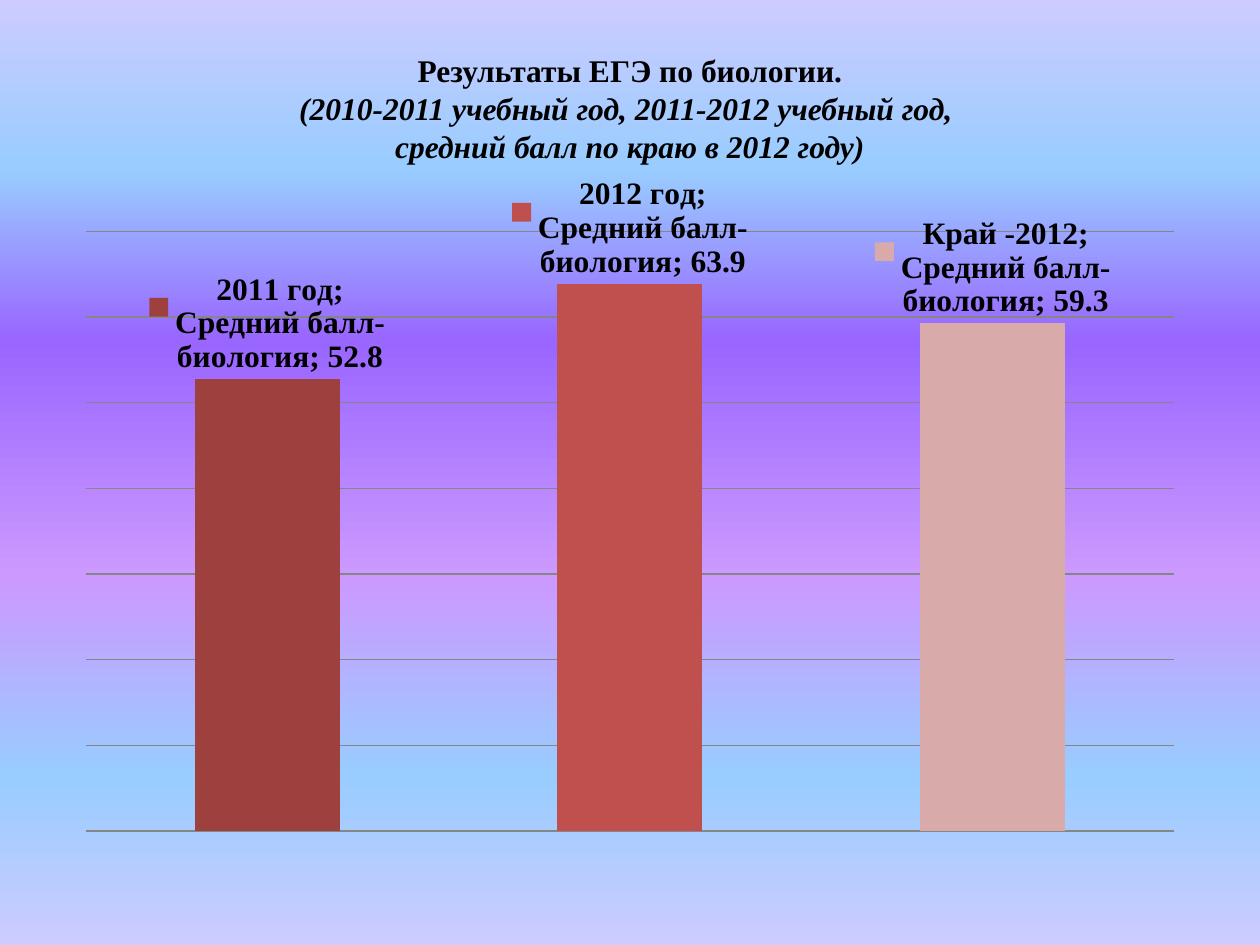
from typing import NamedTuple

from lxml.etree import SubElement
from pptx import Presentation
from pptx.chart.data import CategoryChartData
from pptx.dml.color import RGBColor
from pptx.enum.chart import XL_CHART_TYPE as ChartType, XL_LABEL_POSITION as LabelPosition
from pptx.enum.text import MSO_ANCHOR, PP_ALIGN
from pptx.oxml import parse_xml
from pptx.oxml.ns import nsdecls, qn
from pptx.util import Inches, Pt

BLACK = RGBColor(0x00, 0x00, 0x00)
GRID_GREY = RGBColor(0x86, 0x86, 0x86)
LAVENDER = RGBColor(0xCC, 0xCC, 0xFF)
SKY = RGBColor(0x99, 0xCC, 0xFF)
VIOLET = RGBColor(0x99, 0x66, 0xFF)
ORCHID = RGBColor(0xCC, 0x99, 0xFF)
DARK_RED = RGBColor(0x9E, 0x41, 0x3E)
RED = RGBColor(0xC0, 0x50, 0x4D)
PALE_RED = RGBColor(0xD8, 0xAA, 0xA9)
SERIF = "Times New Roman"


class Stop(NamedTuple):
    percent: int
    color: RGBColor


class Result(NamedTuple):
    category: str
    score: float
    color: RGBColor


class TitleParagraph(NamedTuple):
    text: str
    italic: bool


STOPS = [Stop(0, LAVENDER), Stop(18, SKY), Stop(36, VIOLET),
         Stop(61, ORCHID), Stop(82, SKY), Stop(100, LAVENDER)]
RESULTS = [Result("2011 год", 52.8, DARK_RED),
           Result("2012 год", 63.9, RED),
           Result("Край -2012", 59.3, PALE_RED)]
TITLE = [
    TitleParagraph("Результаты ЕГЭ по биологии.", False),
    TitleParagraph("(2010-2011 учебный год, 2011-2012 учебный год, \v"
                   "средний балл по краю в 2012 году)", True),
]


def paint_background(slide) -> None:
    fill = slide.background.fill
    fill.gradient()
    stops = "".join(
        f'<a:gs pos="{stop.percent * 1000}"><a:srgbClr val="{stop.color}"/></a:gs>'
        for stop in STOPS)
    gradient = slide.background._cSld.find(".//" + qn("a:gradFill"))
    gradient.getparent().replace(gradient, parse_xml(
        f'<a:gradFill {nsdecls("a")} rotWithShape="1"><a:gsLst>{stops}</a:gsLst>'
        '<a:lin ang="5400000" scaled="0"/></a:gradFill>'))


def add_title(slide) -> None:
    frame = slide.shapes.add_textbox(
        Inches(0.5), Inches(0.31), Inches(9), Inches(1.09)).text_frame
    frame.word_wrap = True
    frame.vertical_anchor = MSO_ANCHOR.MIDDLE
    for index, content in enumerate(TITLE):
        paragraph = frame.add_paragraph() if index else frame.paragraphs[0]
        paragraph.text = content.text
        paragraph.alignment = PP_ALIGN.CENTER
        paragraph.line_spacing = Pt(21.7)
        font = paragraph.font
        font.name, font.size, font.bold = SERIF, Pt(18), True
        font.italic = content.italic
        font.color.rgb = BLACK


def set_plot_layout(chart, **fractions: float) -> None:
    """Fix the inner plot area as fractions of the chart."""
    plot_area = chart._chartSpace.chart.plotArea
    old_layout = plot_area.find(qn("c:layout"))
    if old_layout is not None:
        plot_area.remove(old_layout)
    layout = parse_xml(f'<c:layout {nsdecls("c")}/>')
    manual = SubElement(layout, qn("c:manualLayout"))
    settings = {"layoutTarget": "inner", "xMode": "edge", "yMode": "edge", **fractions}
    for name, value in settings.items():
        SubElement(manual, qn(f"c:{name}")).set("val", str(value))
    plot_area.insert(0, layout)


def label_bars(series) -> None:
    labels = series.data_labels
    labels.show_value = labels.show_category_name = True
    labels.show_series_name = labels.show_legend_key = True
    labels.position = LabelPosition.OUTSIDE_END
    font = labels.font
    font.name, font.size, font.bold = SERIF, Pt(18), True
    font.color.rgb = BLACK
    separator = parse_xml(f'<c:separator {nsdecls("c")}>; </c:separator>')
    labels._element.find(qn("c:showBubbleSize")).addnext(separator)


def add_score_chart(slide) -> None:
    data = CategoryChartData(number_format="General")
    data.categories = [result.category for result in RESULTS]
    data.add_series("Средний балл-биология", [result.score for result in RESULTS])
    chart = slide.shapes.add_chart(
        ChartType.COLUMN_CLUSTERED, Inches(0.5), Inches(1.41),
        Inches(9), Inches(5.29), data).chart
    chart.has_legend = chart.has_title = False
    chart.font.name, chart.font.size = "Calibri", Pt(10)
    chart.font.color.rgb = BLACK
    set_plot_layout(chart, x=0.02, y=0.07, w=0.96, h=0.91)

    # Hidden axes with visible gridlines
    chart.category_axis.visible = False
    scores = chart.value_axis
    scores.visible = False
    scores.minimum_scale, scores.maximum_scale, scores.major_unit = 0, 70, 10
    scores.has_major_gridlines = True
    grid_line = scores.major_gridlines.format.line
    grid_line.color.rgb, grid_line.width = GRID_GREY, Pt(0.75)

    # One colour per bar
    plot = chart.plots[0]
    plot.gap_width = 150
    plot.vary_by_categories = True
    series = plot.series[0]
    for index, result in enumerate(RESULTS):
        fill = series.points[index].format.fill
        fill.solid()
        fill.fore_color.rgb = result.color
    label_bars(series)


def main() -> None:
    presentation = Presentation()
    presentation.slide_width, presentation.slide_height = Inches(10), Inches(7.5)
    slide = presentation.slides.add_slide(presentation.slide_layouts[6])
    paint_background(slide)
    add_title(slide)
    add_score_chart(slide)
    presentation.save("out.pptx")


if __name__ == "__main__":
    main()
